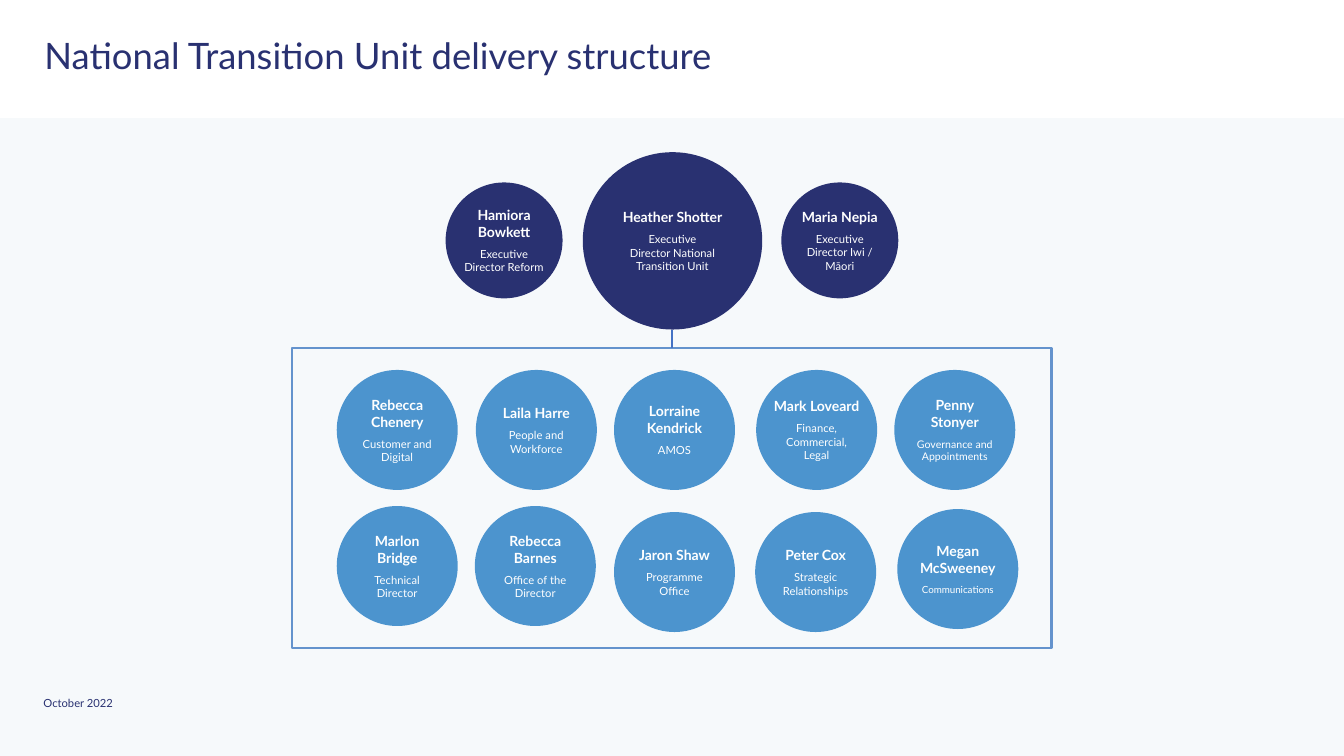
import pptx
import pptx.dml.color
import pptx.enum.shapes
import pptx.enum.text
import pptx.util
import lxml.etree

WIDTH, HEIGHT = 13.33, 7.5
NAVY, SKY, WHITE = "293171", "4C94CE", "FFFFFF"
FRAME_BLUE, LINK_BLUE, PALE = "6493CD", "4472C4", "F6F9FB"
COLUMNS = [3.34, 4.72, 6.09, 7.5, 8.87]
ROWS = [3.67, 5.02]
TEAM_SIZE = (1.2, 1.19)
SIDE_SIZE = (1.16, 1.15)

EXECUTIVES = [
    ((5.78, 1.51), (1.78, 1.76), "Heather Shotter",
     "Executive\vDirector National Transition Unit"),
    ((4.42, 1.81), SIDE_SIZE, "Hamiora Bowkett", "Executive Director Reform"),
    ((7.75, 1.81), SIDE_SIZE, "Maria Nepia", "Executive Director Iwi / Māori"),
]

TEAM = [
    [("Rebecca Chenery", "Customer and Digital", 8, 0, 0),
     ("Laila Harre", "People and Workforce", 8, 0, 0),
     ("Lorraine Kendrick", "AMOS", 8, 0, 0),
     ("Mark Loveard", "Finance, Commercial, Legal", 8, 0, 0),
     ("Penny Stonyer", "Governance and Appointments", 7.5, 0, 0)],
    [("Marlon Bridge", "Technical Director", 8, 0, 0),
     ("Rebecca Barnes", "Office of the Director", 8, -0.01, 0),
     ("Jaron Shaw", "Programme Office", 8, 0, 0.06),
     ("Peter Cox", "Strategic Relationships", 8, -0.01, 0.06),
     ("Megan McSweeney", "Communications", 7, 0.03, 0.03)],
]


def inches(*lengths):
    return [pptx.util.Inches(length) for length in lengths]


def colour(hex_value):
    return pptx.dml.color.RGBColor.from_string(hex_value)


def apply_format(target, formats):
    for attribute, value in formats.items():
        setattr(target, attribute, value)


def write(paragraph, words, size, hex_value, bold=False, **formats):
    paragraph.text = words
    apply_format(paragraph, formats)
    for run in paragraph.runs:
        apply_format(run.font, {"name": "Lato", "bold": bold,
                                "size": pptx.util.Pt(size)})
        run.font.color.rgb = colour(hex_value)


def prepare_frame(frame, anchor):
    apply_format(frame, {
        "margin_left": 0, "margin_right": 0, "margin_top": 0, "margin_bottom": 0,
        "word_wrap": True, "vertical_anchor": anchor,
        "auto_size": pptx.enum.text.MSO_AUTO_SIZE.NONE,
    })


def add_area(slide, kind, box, fill=None, line=None):
    area = slide.shapes.add_shape(kind, *inches(*box))
    area.shadow.inherit = False
    if fill:
        area.fill.solid()
        area.fill.fore_color.rgb = colour(fill)
    else:
        area.fill.background()
    if line:
        area.line.color.rgb = colour(line)
        area.line.width = pptx.util.Pt(1.5)
    else:
        area.line.fill.background()
    return area


def add_person(slide, place, size, fill, name, role, role_size=8):
    person = add_area(slide, pptx.enum.shapes.MSO_SHAPE.OVAL, (*place, *size), fill)
    frame = person.text_frame
    prepare_frame(frame, pptx.enum.text.MSO_ANCHOR.MIDDLE)
    centre = pptx.enum.text.PP_ALIGN.CENTER
    write(frame.paragraphs[0], name, 10, WHITE, True, alignment=centre)
    write(frame.add_paragraph(), role, role_size, WHITE, alignment=centre,
          space_before=pptx.util.Pt(5), space_after=pptx.util.Pt(5))
    return person


def add_link(slide, leader, team_frame):
    middle = team_frame.left + team_frame.width // 2
    link = slide.shapes.add_connector(
        pptx.enum.shapes.MSO_CONNECTOR.STRAIGHT,
        middle, leader.top + leader.height, middle, team_frame.top)
    link.end_connect(team_frame, 0)
    link.line.color.rgb = colour(LINK_BLUE)
    link.line.width = pptx.util.Pt(1.5)
    lxml.etree.SubElement(link.element.spPr, pptx.oxml.ns.qn("a:effectLst"))


def place_text(holder, box, words, size, **formats):
    left, top, width, height = inches(*box)
    apply_format(holder, {"left": left, "top": top, "width": width, "height": height})
    prepare_frame(holder.text_frame, pptx.enum.text.MSO_ANCHOR.TOP)
    write(holder.text_frame.paragraphs[0], words, size, NAVY,
          alignment=pptx.enum.text.PP_ALIGN.LEFT, **formats)


def main():
    deck = pptx.Presentation()
    deck.slide_width, deck.slide_height = inches(WIDTH, HEIGHT)
    slide = deck.slides.add_slide(deck.slide_layouts[5])
    slide.background.fill.solid()
    slide.background.fill.fore_color.rgb = colour(PALE)

    rectangle = pptx.enum.shapes.MSO_SHAPE.RECTANGLE
    header = add_area(slide, rectangle, (0, 0, WIDTH, 1.17), WHITE)
    slide.shapes.title.element.addprevious(header.element)
    place_text(slide.shapes.title, (0.44, 0.38, 8.61, 0.39),
               "National Transition Unit delivery structure", 26, line_spacing=0.9)
    date_box = (0.43, 6.91, 2.25, 0.13)
    place_text(slide.shapes.add_textbox(*inches(*date_box)), date_box,
               "October 2022", 8)

    team_frame = add_area(slide, rectangle, (2.9, 3.45, 7.53, 2.98), line=FRAME_BLUE)
    leader, *_ = [add_person(slide, place, size, NAVY, name, role)
                  for place, size, name, role in EXECUTIVES]
    for top, members in zip(ROWS, TEAM):
        for left, (name, role, role_size, shift, drop) in zip(COLUMNS, members):
            add_person(slide, (left + shift, top + drop), TEAM_SIZE, SKY,
                       name, role, role_size)
    add_link(slide, leader, team_frame)

    deck.save("out.pptx")


if __name__ == "__main__":
    main()
